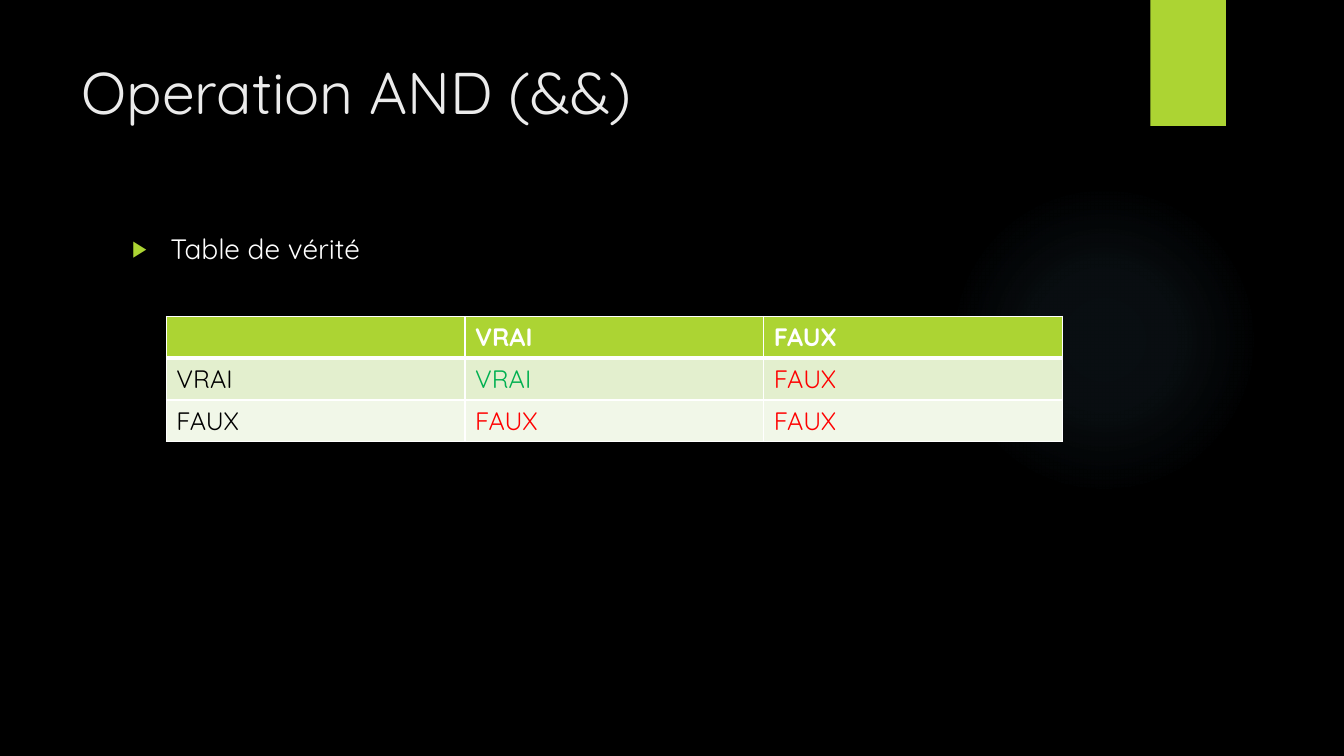
import pptx
import pptx.dml.color
import pptx.enum.shapes
import pptx.enum.text
import pptx.oxml
import pptx.oxml.ns
import pptx.util

WIDTH, HEIGHT = 13.33, 7.5
FONT = "Quicksand"
COLORS = {
    "background": "000000",
    "accent": "ACD433",
    "glow": "7AC4F0",
    "title": "EBEBEB",
    "white": "FFFFFF",
    "black": "000000",
    "true": "00B050",
    "false": "FF0000",
    "band_dark": "E3EFCE",
    "band_light": "F1F7E8",
}
TRUTH_TABLE = [["", "VRAI", "FAUX"], ["VRAI", "VRAI", "FAUX"], ["FAUX", "FAUX", "FAUX"]]
ROW_FILLS = ["accent", "band_dark", "band_light"]


def rgb(name):
    return pptx.dml.color.RGBColor.from_string(COLORS[name])


def box(left, top, width, height):
    return [pptx.util.Inches(value) for value in (left, top, width, height)]


def xml(markup):
    return pptx.oxml.parse_xml(markup.replace(" ", f" {pptx.oxml.ns.nsdecls('a')} ", 1))


def write_text(frame, text, size, color, bold=False):
    paragraph = frame.paragraphs[0]
    paragraph.alignment = pptx.enum.text.PP_ALIGN.LEFT
    paragraph.space_before = pptx.util.Pt(0)
    run = paragraph.add_run()
    run.text = text
    run.font.name = FONT
    run.font.size = pptx.util.Pt(size)
    run.font.bold = bold
    run.font.color.rgb = rgb(color)
    return paragraph


def add_decoration(slide, kind, area, color):
    shape = slide.shapes.add_shape(kind, *box(*area))
    shape.shadow.inherit = False
    shape.line.fill.background()
    shape.fill.solid()
    shape.fill.fore_color.rgb = rgb(color)
    return shape


def make_glow(shape, color, stops):
    """Replace the solid fill with a radial fade of (position, opacity) percentages."""
    stop_markup = "".join(
        f'<a:gs pos="{position * 1000}"><a:srgbClr val="{COLORS[color]}">'
        f'<a:alpha val="{opacity * 1000}"/></a:srgbClr></a:gs>'
        for position, opacity in stops
    )
    gradient = xml(
        f'<a:gradFill rotWithShape="1"><a:gsLst>{stop_markup}</a:gsLst><a:path path="circle">'
        '<a:fillToRect l="50000" t="50000" r="50000" b="50000"/></a:path></a:gradFill>'
    )
    properties = shape.element.spPr
    solid = properties.find(pptx.oxml.ns.qn("a:solidFill"))
    properties.replace(solid, gradient)


def fill_placeholder(placeholder, area, text, size, color):
    placeholder.left, placeholder.top, placeholder.width, placeholder.height = box(*area)
    frame = placeholder.text_frame
    frame.word_wrap = True
    frame.auto_size = pptx.enum.text.MSO_AUTO_SIZE.NONE
    frame.vertical_anchor = pptx.enum.text.MSO_ANCHOR.TOP
    # Keep the text in front of the decorations
    placeholder.element.getparent().append(placeholder.element)
    return write_text(frame, text, size, color)


def add_bullet(paragraph, color):
    properties = paragraph._p.get_or_add_pPr()
    indent = pptx.util.Inches(0.38)
    properties.set("marL", str(indent))
    properties.set("indent", str(-indent))
    for markup in (
        f'<a:buClr ><a:srgbClr val="{COLORS[color]}"/></a:buClr>',
        '<a:buSzPct val="80000"/>',
        '<a:buChar char="▶"/>',
    ):
        properties.append(xml(markup))


def set_borders(cell, top, bottom):
    properties = cell._tc.get_or_add_tcPr()
    for side, points in (("L", 1), ("R", 1), ("T", top), ("B", bottom)):
        properties.append(xml(
            f'<a:ln{side} w="{pptx.util.Pt(points)}"><a:solidFill>'
            f'<a:srgbClr val="{COLORS["white"]}"/></a:solidFill></a:ln{side}>'
        ))


def text_color(row, column, text):
    if row == 0:
        return "white"
    if column == 0:
        return "black"
    return "true" if text == "VRAI" else "false"


def add_truth_table(slide, area):
    row_count, column_count = len(TRUTH_TABLE), len(TRUTH_TABLE[0])
    table = slide.shapes.add_table(row_count, column_count, *box(*area)).table
    for row, texts in enumerate(TRUTH_TABLE):
        for column, text in enumerate(texts):
            cell = table.cell(row, column)
            set_borders(cell, top=3 if row == 1 else 1, bottom=3 if row == 0 else 1)
            cell.fill.solid()
            cell.fill.fore_color.rgb = rgb(ROW_FILLS[row])
            if text:
                write_text(cell.text_frame, text, 18, text_color(row, column, text), bold=row == 0)


def main():
    presentation = pptx.Presentation()
    presentation.slide_width = pptx.util.Inches(WIDTH)
    presentation.slide_height = pptx.util.Inches(HEIGHT)
    slide = presentation.slides.add_slide(presentation.slide_layouts[1])
    slide.background.fill.solid()
    slide.background.fill.fore_color.rgb = rgb("background")

    # Decorations
    shapes = pptx.enum.shapes.MSO_SHAPE
    glow = add_decoration(slide, shapes.OVAL, (9.41, 1.83, 3.08, 3.08), "glow")
    make_glow(glow, "glow", [(0, 7), (36, 6), (69, 0), (100, 0)])
    add_decoration(slide, shapes.RECTANGLE, (11.41, 0, 0.75, HEIGHT / 6), "accent")

    # Title and list
    title, body = slide.placeholders
    fill_placeholder(title, (0.71, 0.5, 10.29, 1.53), "Operation AND (&&)", 42, "title")
    item = fill_placeholder(body, (1.21, 2.25, 9.78, 4.59), "Table de vérité", 20, "white")
    add_bullet(item, "accent")

    # Truth table
    add_truth_table(slide, (1.65, 3.14, WIDTH * 2 / 3, 1.24))
    presentation.save("out.pptx")


if __name__ == "__main__":
    main()
